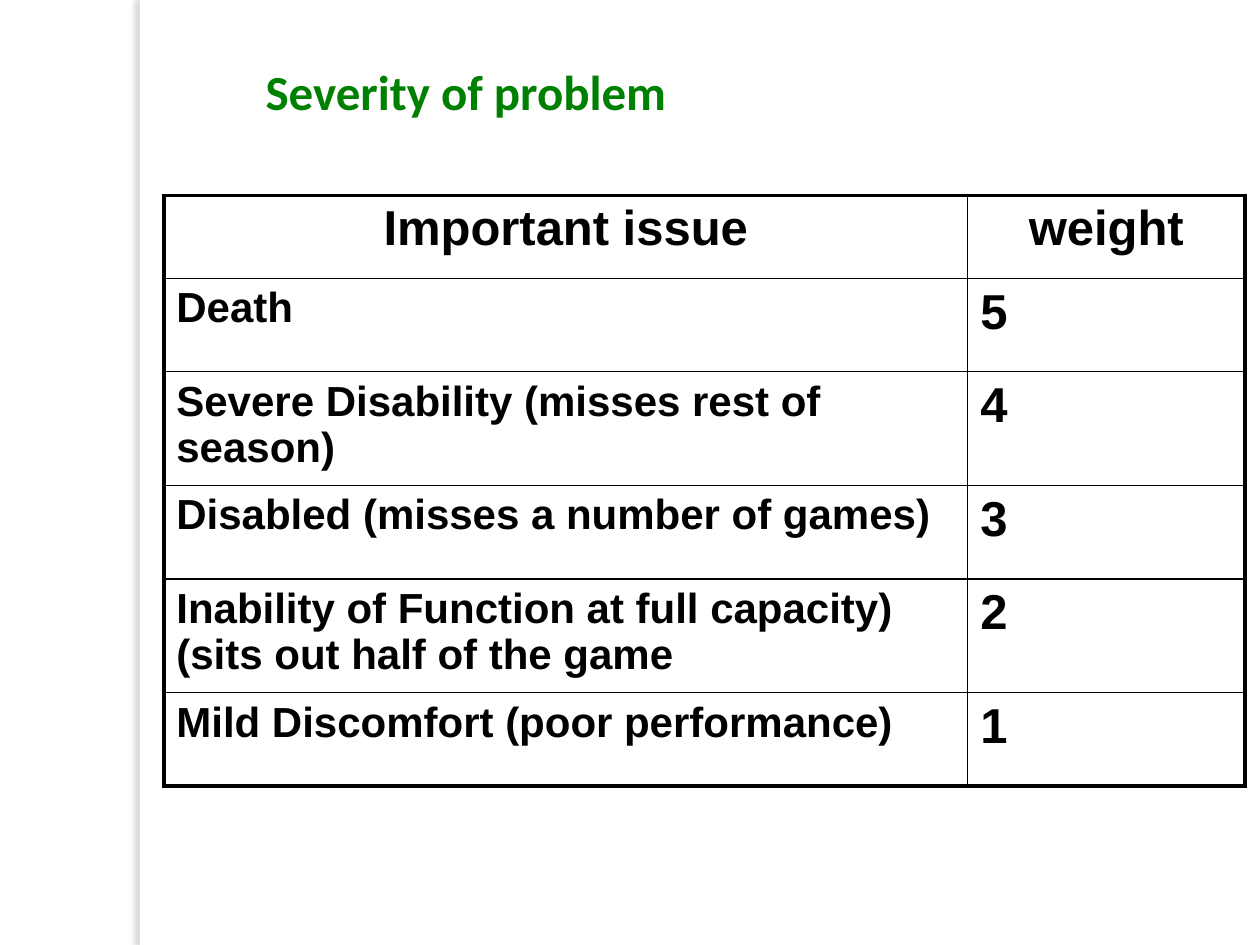
from lxml import etree
from pptx import Presentation
from pptx import util as u
from pptx.dml.color import RGBColor
from pptx.enum import shapes, text
from pptx.oxml import ns


def color(value):
    return RGBColor.from_string(value)


def child(parent, tag, **attributes):
    values = {key: str(value) for key, value in attributes.items()}
    return etree.SubElement(parent, ns.qn(tag), values)


class SeverityDeck:
    ink = "000000"
    accent = "008000"
    paper = "FFFFFF"
    shade = "736F63"
    thin, thick = 1, 2.25

    def __init__(self):
        self.deck = Presentation()
        self.deck.slide_width = u.Inches(10)
        self.deck.slide_height = u.Inches(7.5)
        self.page = self.deck.slides.add_slide(self.deck.slide_layouts[6])

    def across(self, percent):
        return round(self.deck.slide_width * percent / 100)

    def down(self, percent):
        return round(self.deck.slide_height * percent / 100)

    def place(self, left, top, width, height):
        return self.across(left), self.down(top), self.across(width), self.down(height)

    def fill_text(self, frame, words, size, font, ink, align=text.PP_ALIGN.LEFT):
        frame.text = words
        para = frame.paragraphs[0]
        para.alignment = align
        span = para.runs[0]
        span.font.size = u.Pt(size)
        span.font.name = font
        span.font.bold = True
        span.font.color.rgb = color(ink)

    def divider(self, *area):
        bar = self.page.shapes.add_shape(shapes.MSO_SHAPE.RECTANGLE, *self.place(*area))
        bar.fill.solid()
        bar.fill.fore_color.rgb = color(self.paper)
        bar.line.fill.background()
        bar.shadow.inherit = False
        effects = bar._element.spPr.find(ns.qn("a:effectLst"))
        shadow = child(effects, "a:outerShdw", blurRad=u.Pt(3), dist=u.Pt(3),
                       dir=180 * 60000, algn="ctr", rotWithShape=0)
        tint = child(shadow, "a:srgbClr", val=self.shade)
        child(tint, "a:alpha", val=25000)

    def title(self, words, *area):
        box = self.page.shapes.add_textbox(*self.place(*area))
        box.text_frame.word_wrap = False
        box.text_frame.auto_size = text.MSO_AUTO_SIZE.SHAPE_TO_FIT_TEXT
        self.fill_text(box.text_frame, words, 28, "Calibri", self.accent)

    def borders(self, cell, outer_sides):
        properties = cell._tc.get_or_add_tcPr()
        for side in "LRTB":
            weight = self.thick if side in outer_sides else self.thin
            line = child(properties, f"a:ln{side}", w=u.Pt(weight))
            child(child(line, "a:solidFill"), "a:srgbClr", val=self.ink)

    def table(self, rows, left, top, widths, heights):
        area = self.place(left, top, sum(widths), sum(heights))
        grid = self.page.shapes.add_table(len(rows), len(widths), *area).table
        grid.first_row = False
        grid.horz_banding = False
        for column, width in zip(grid.columns, widths):
            column.width = self.across(width)
        last_row, last_column = len(rows) - 1, len(widths) - 1
        for r, (row, height) in enumerate(zip(rows, heights)):
            grid.rows[r].height = self.down(height)
            for c, words in enumerate(row):
                cell = grid.cell(r, c)
                edges = {"L": c == 0, "R": c == last_column,
                         "T": r == 0, "B": r == last_row}
                self.borders(cell, [side for side, outer in edges.items() if outer])
                cell.fill.background()
                size = 28 if r == 0 or c == last_column else 24
                align = text.PP_ALIGN.CENTER if r == 0 else text.PP_ALIGN.LEFT
                self.fill_text(cell.text_frame, words, size, "Arial", self.ink, align)


def main():
    severity = SeverityDeck()
    severity.divider(11.1, 0, 0.8, 100)
    severity.title("Severity of problem", 20.1, 5.87, 38.4, 7.6)
    rows = [
        ("Important issue", "weight"),
        ("Death", "5"),
        ("Severe Disability (misses rest of season)", "4"),
        ("Disabled (misses a number of games)", "3"),
        ("Inability of Function at full capacity) (sits out half of the game", "2"),
        ("Mild Discomfort (poor performance)", "1"),
    ]
    single, double = 9.87, 12.05
    heights = [8.8, single, double, single, double, single]
    severity.table(rows, 13, 20.67, [63.8, 22], heights)
    severity.deck.save("out.pptx")


if __name__ == "__main__":
    main()
